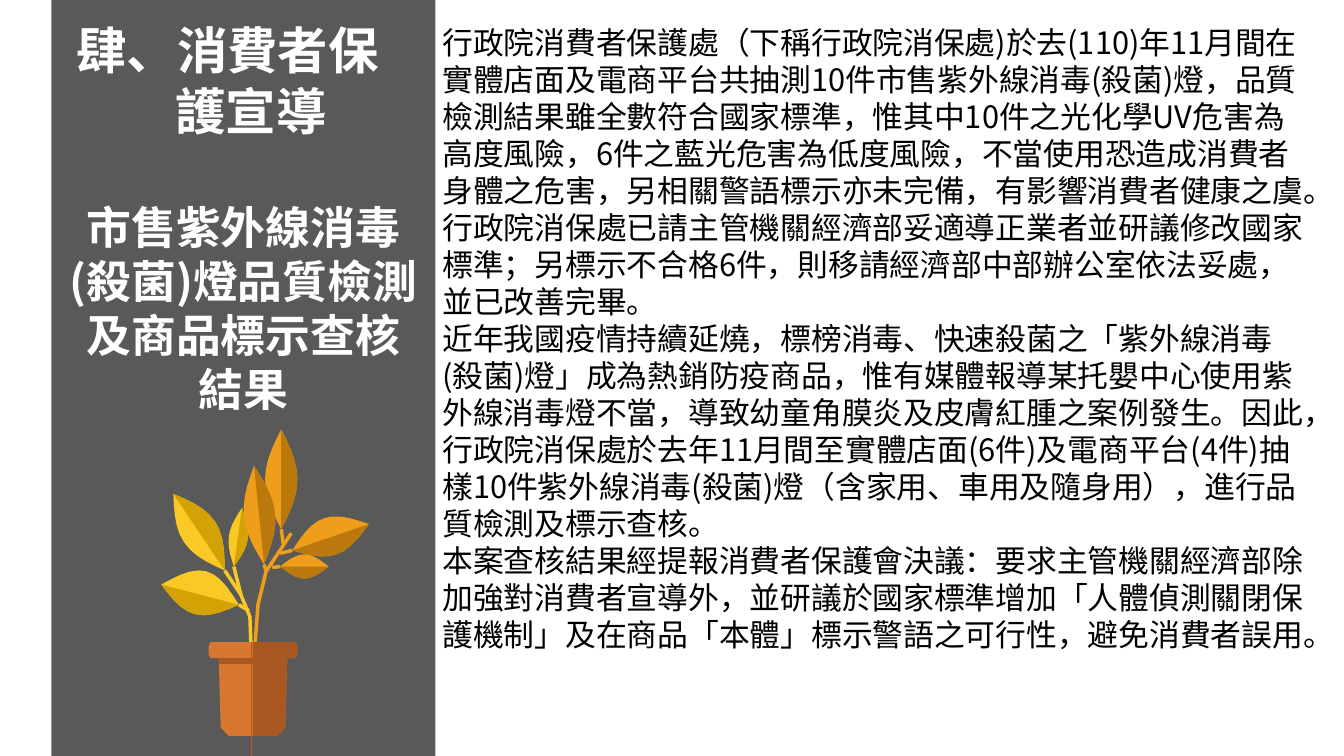
import math

import pptx
import pptx.dml.color
import pptx.enum.shapes
import pptx.enum.text
import pptx.oxml.ns
import pptx.util
from lxml import etree

Pt = pptx.util.Pt
FONT = "Noto Sans CJK SC"
UNIT = 0.72
STEPS = 10

TITLE = ["肆、消費者保護宣導"]
SUBTITLE = ["市售紫外線消毒(殺菌)燈品質檢測及商品標示查核結果"]
BODY = [
    "行政院消費者保護處（下稱行政院消保處)於去(110)年11月間在實體店面及電商平台共抽測10件市售紫外線消毒(殺菌)燈，品質檢測結果雖全數符合國家標準，惟其中10件之光化學UV危害為高度風險，6件之藍光危害為低度風險，不當使用恐造成消費者身體之危害，另相關警語標示亦未完備，有影響消費者健康之虞。行政院消保處已請主管機關經濟部妥適導正業者並研議修改國家標準；另標示不合格6件，則移請經濟部中部辦公室依法妥處，並已改善完畢。\n"
    "近年我國疫情持續延燒，標榜消毒、快速殺菌之「紫外線消毒(殺菌)燈」成為熱銷防疫商品，惟有媒體報導某托嬰中心使用紫外線消毒燈不當，導致幼童角膜炎及皮膚紅腫之案例發生。因此，行政院消保處於去年11月間至實體店面(6件)及電商平台(4件)抽樣10件紫外線消毒(殺菌)燈（含家用、車用及隨身用），進行品質檢測及標示查核。",
    "本案查核結果經提報消費者保護會決議：要求主管機關經濟部除加強對消費者宣導外，並研議於國家標準增加「人體偵測關閉保護機制」及在商品「本體」標示警語之可行性，避免消費者誤用。",
]

YELLOW = ("FAC926", "D3A305")
ORANGE = ("EF9E1B", "BA780D")
CLAY = ("D87732", "A85820")

LEAVES = [
    (YELLOW, (237, 600), (160, 580), 24, -20),
    (YELLOW, (223, 566), (172, 490), -18, 19),
    (YELLOW, (232, 562), (240, 504), -9, 10),
    (ORANGE, (290, 546), (366, 520), -20, 18),
    (ORANGE, (279, 525), (279, 426), -16, 16),
    (ORANGE, (262, 560), (252, 462), -15, 16),
    (ORANGE, (278, 562), (326, 562), -12, 12),
]
STEMS = [
    (YELLOW, [(249, 640), (248, 612), (239, 590), (223, 566)]),
    (YELLOW, [(247, 606), (237, 600)]),
    (YELLOW, [(239, 590), (232, 562)]),
    (ORANGE, [(253, 640), (256, 600), (264, 567), (289, 529)]),
    (ORANGE, [(264, 567), (262, 560)]),
    (ORANGE, [(270, 563), (278, 562)]),
    (ORANGE, [(278, 549), (290, 546)]),
    (ORANGE, [(281, 540), (279, 525)]),
]
POT_CENTER = 251
POT_HALF = [(0, 637), (42, 637), (44, 641), (44, 649), (42, 653),
            (34, 653), (32, 722), (24, 730), (0, 730)]
POT_BAND = (34, 653, 659)

presentation = pptx.Presentation()
presentation.slide_width = Pt(960)
presentation.slide_height = Pt(540)
slide = presentation.slides.add_slide(presentation.slide_layouts[6])


def color(value):
    return pptx.dml.color.RGBColor.from_string(value)


def paint(shape, fill):
    shape.shadow.inherit = False
    shape.fill.solid()
    shape.fill.fore_color.rgb = color(fill)
    shape.line.fill.background()


def add_text(paragraphs, left, top, width, height, size, pitch, fill="FFFFFF", bold=False,
             align=pptx.enum.text.PP_ALIGN.LEFT, anchor=pptx.enum.text.MSO_ANCHOR.TOP, hanging=0):
    box = slide.shapes.add_textbox(Pt(left), Pt(top), Pt(width), Pt(height))
    frame = box.text_frame
    frame.word_wrap = True
    frame.vertical_anchor = anchor
    for index, text in enumerate(paragraphs):
        paragraph = frame.paragraphs[0] if index == 0 else frame.add_paragraph()
        paragraph.text = text
        paragraph.alignment = align
        paragraph.line_spacing = Pt(pitch)
        if hanging:
            properties = paragraph._p.get_or_add_pPr()
            properties.set("marL", str(Pt(hanging)))
            properties.set("indent", str(-Pt(hanging)))
        for run in paragraph.runs:
            run.font.name = FONT
            run.font.size = Pt(size)
            run.font.bold = bold
            run.font.color.rgb = color(fill)
            east_asian = etree.SubElement(run.font._element, pptx.oxml.ns.qn("a:ea"))
            east_asian.set("typeface", FONT)


def add_outline(points, close=True):
    scaled = [(Pt(x * UNIT), Pt(y * UNIT)) for x, y in points]
    builder = plant.shapes.build_freeform(*scaled[0])
    builder.add_line_segments(scaled[1:], close=close)
    return builder.convert_to_shape()


def leaf_edge(base, tip, bulge):
    dx, dy = tip[0] - base[0], tip[1] - base[1]
    length = math.hypot(dx, dy)
    edge = []
    for step in range(STEPS + 1):
        t = step / STEPS
        offset = bulge * math.sin(math.pi * t) / length
        edge.append((base[0] + dx * t - dy * offset, base[1] + dy * t + dx * offset))
    return edge


panel = slide.shapes.add_shape(pptx.enum.shapes.MSO_SHAPE.RECTANGLE,
                               Pt(36.7), Pt(0), Pt(274.3), Pt(541.4))
paint(panel, "595959")

plant = slide.shapes.add_group_shape()
for (bright, dark), points in STEMS:
    stem = add_outline(points, close=False)
    stem.shadow.inherit = False
    stem.fill.background()
    stem.line.color.rgb = color(bright)
    stem.line.width = Pt(2.5)

for (bright, dark), base, tip, bright_bulge, dark_bulge in LEAVES:
    dark_edge = leaf_edge(base, tip, dark_bulge)
    paint(add_outline(leaf_edge(base, tip, bright_bulge) + dark_edge[::-1]), bright)
    paint(add_outline(dark_edge), dark)

right_half = [(POT_CENTER + x, y) for x, y in POT_HALF]
left_half = [(POT_CENTER - x, y) for x, y in POT_HALF]
band_half, band_top, band_bottom = POT_BAND
band_left, band_right = POT_CENTER - band_half, POT_CENTER + band_half
paint(add_outline(right_half + left_half[::-1]), CLAY[0])
paint(add_outline(right_half), CLAY[1])
paint(add_outline([(band_left, band_top), (band_right, band_top),
                   (band_right, band_bottom), (band_left, band_bottom)]), CLAY[1])

seam = slide.shapes.add_connector(pptx.enum.shapes.MSO_CONNECTOR.STRAIGHT,
                                  Pt(179.4), Pt(458.6), Pt(179.4), Pt(540))
seam.line.color.rgb = color("C1531C")
seam.line.width = Pt(0.5)
etree.SubElement(seam._element.spPr, pptx.oxml.ns.qn("a:effectLst"))

add_text(TITLE, 47.5, 10, 252, 94.3, 36, 43.2, bold=True, hanging=70.6,
         anchor=pptx.enum.text.MSO_ANCHOR.MIDDLE)
add_text(SUBTITLE, 42.5, 139, 262.8, 162.7, 32, 38.6, bold=True,
         align=pptx.enum.text.PP_ALIGN.CENTER)
add_text(BODY, 308.9, 13.7, 633.6, 460.8, 22, 26.4, fill="000000")

presentation.save("out.pptx")
